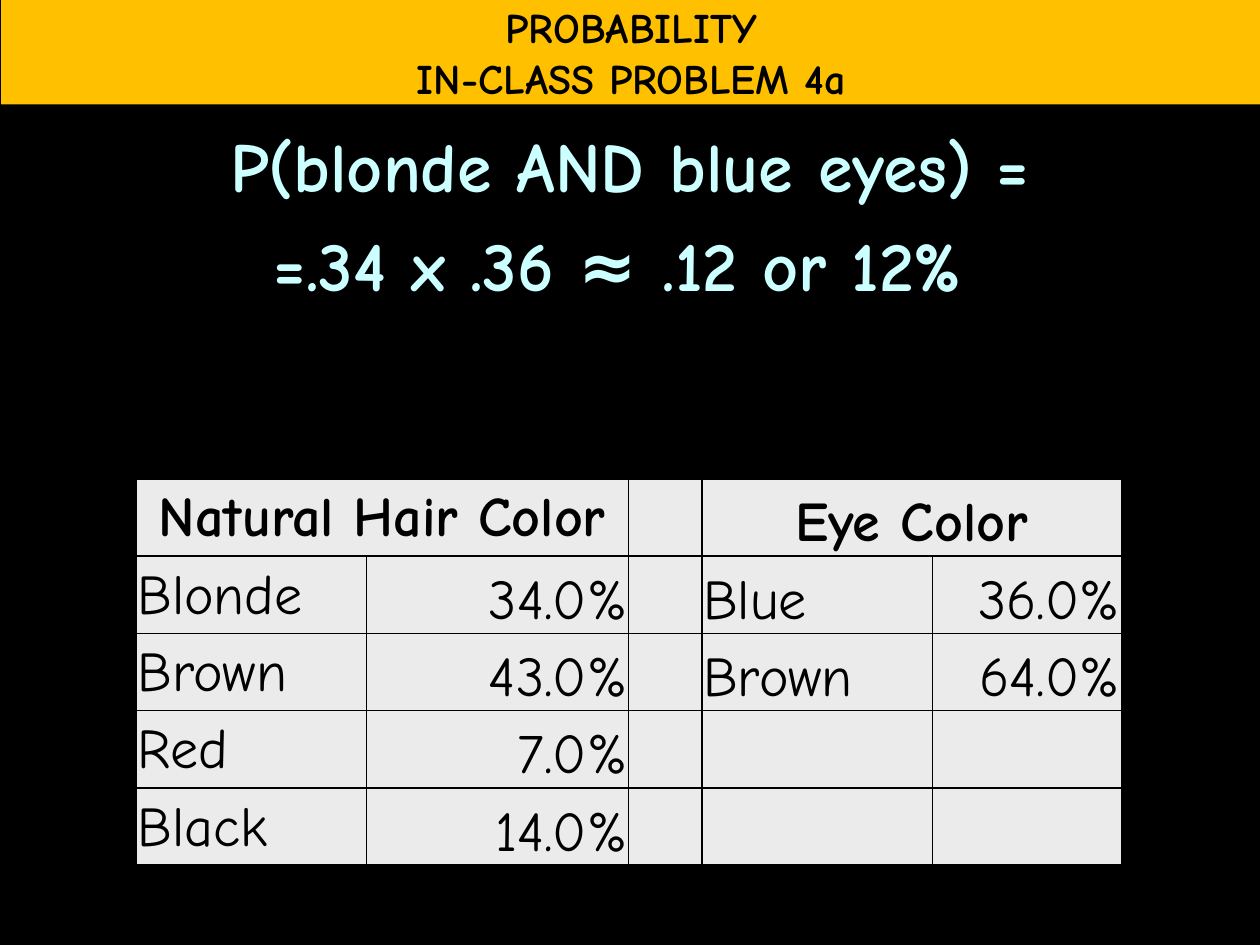
from lxml import etree
from pptx import Presentation
from pptx.dml.color import RGBColor
from pptx.enum.shapes import MSO_SHAPE
from pptx.enum.text import MSO_ANCHOR, PP_ALIGN
from pptx.oxml.ns import qn
from pptx.util import Inches, Pt

LEFT, CENTER, RIGHT = PP_ALIGN.LEFT, PP_ALIGN.CENTER, PP_ALIGN.RIGHT
MIDDLE, BOTTOM = MSO_ANCHOR.MIDDLE, MSO_ANCHOR.BOTTOM
COLORS = {"black": "000000", "gold": "FFC000", "ice": "CCFFFF", "cell": "EBEBEB"}
FONT = "Comic Neue"


def write(tf, lines, size, color, bold=True, align=CENTER, before=0):
    for i, line in enumerate(lines):
        p = tf.add_paragraph() if i else tf.paragraphs[0]
        p.alignment = align
        p.space_before = Pt(before)
        r = p.add_run()
        r.text = line
        for name, value in {"name": FONT, "size": Pt(size), "bold": bold}.items():
            setattr(r.font, name, value)
        r.font.color.rgb = RGBColor.from_string(COLORS[color])


def add_borders(cell):
    tcPr = cell._tc.get_or_add_tcPr()
    for i, side in enumerate(("a:lnL", "a:lnR", "a:lnT", "a:lnB")):
        ln = etree.Element(qn(side), w=str(Pt(1)))
        fill = etree.SubElement(ln, qn("a:solidFill"))
        etree.SubElement(fill, qn("a:srgbClr"), val=COLORS["black"])
        tcPr.insert(i, ln)


prs = Presentation()
prs.slide_width, prs.slide_height = Inches(10), Inches(7.5)
s = prs.slides.add_slide(prs.slide_layouts[6])
s.background.fill.solid()
s.background.fill.fore_color.rgb = RGBColor.from_string(COLORS["black"])

# Worked answer
sp = s.shapes.add_textbox(Inches(0.5), Inches(0.92), Inches(9), Inches(6.17))
sp.text_frame.word_wrap = True
write(sp.text_frame, ["P(blonde AND blue eyes) =", "=.34 x .36 ≈ .12 or 12% "],
      40, "ice", before=9)

# Title band
sp = s.shapes.add_shape(MSO_SHAPE.RECTANGLE, Inches(0.01), 0, Inches(10), Inches(0.83))
sp.shadow.inherit = False
sp.fill.solid()
sp.fill.fore_color.rgb = RGBColor.from_string(COLORS["gold"])
sp.line.fill.background()
tf = sp.text_frame
tf.word_wrap = False
tf.vertical_anchor = MIDDLE
write(tf, ["PROBABILITY", "IN-CLASS PROBLEM 4a"], 24, "black")

# Hair and eye colour table
ROWS = [
    ["Natural Hair Color", "", "", "Eye Color", ""],
    ["Blonde", "34.0%", "", "Blue", "36.0%"],
    ["Brown", "43.0%", "", "Brown", "64.0%"],
    ["Red", "7.0%", "", "", ""],
    ["Black", "14.0%", "", "", ""],
]
WIDTHS = [1.83, 2.08, 0.58, 1.83, 1.5]
ROW_HEIGHT = 0.59
table = s.shapes.add_table(len(ROWS), len(WIDTHS), Inches(1.08), Inches(3.8),
                           Inches(sum(WIDTHS)), Inches(ROW_HEIGHT * len(ROWS))).table
for col, width in zip(table.columns, WIDTHS):
    col.width = Inches(width)
for i, values in enumerate(ROWS):
    table.rows[i].height = Inches(ROW_HEIGHT)
    for j, text in enumerate(values):
        cell = table.cell(i, j)
        cell.fill.solid()
        cell.fill.fore_color.rgb = RGBColor.from_string(COLORS["cell"])
        add_borders(cell)
        if not text:
            continue
        cell.vertical_anchor = BOTTOM
        top, bottom = (0.04, 0.04) if j == 0 else (0.01, 0)
        margins = {"left": 0.01, "right": 0.01, "top": top, "bottom": bottom}
        for side, value in margins.items():
            setattr(cell, f"margin_{side}", Inches(value))
        align = CENTER if i == 0 else RIGHT if text.endswith("%") else LEFT
        write(cell.text_frame, [text], 32, "black", bold=i == 0, align=align)
for j in (0, 3):
    table.cell(0, j).merge(table.cell(0, j + 1))

prs.save("out.pptx")
